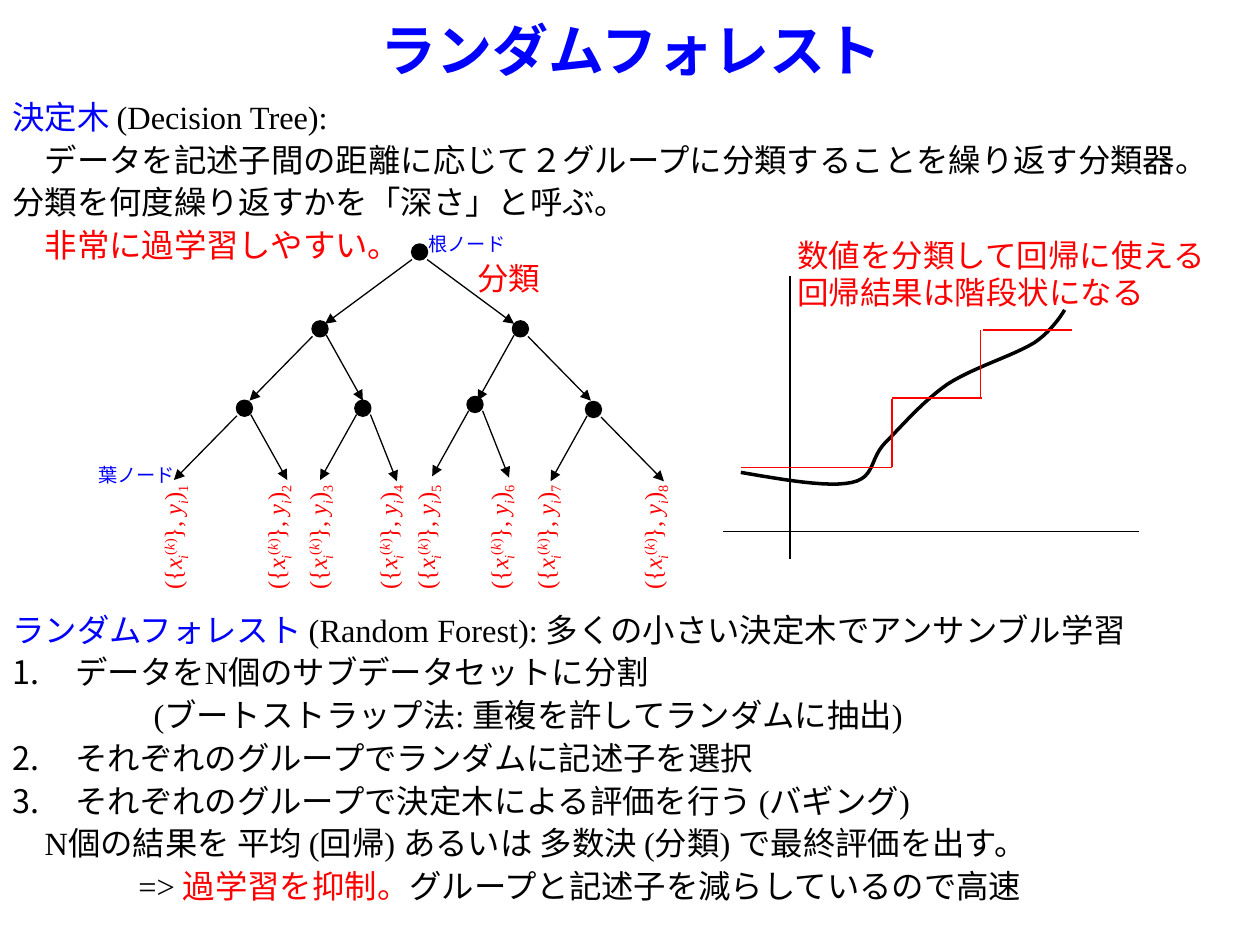
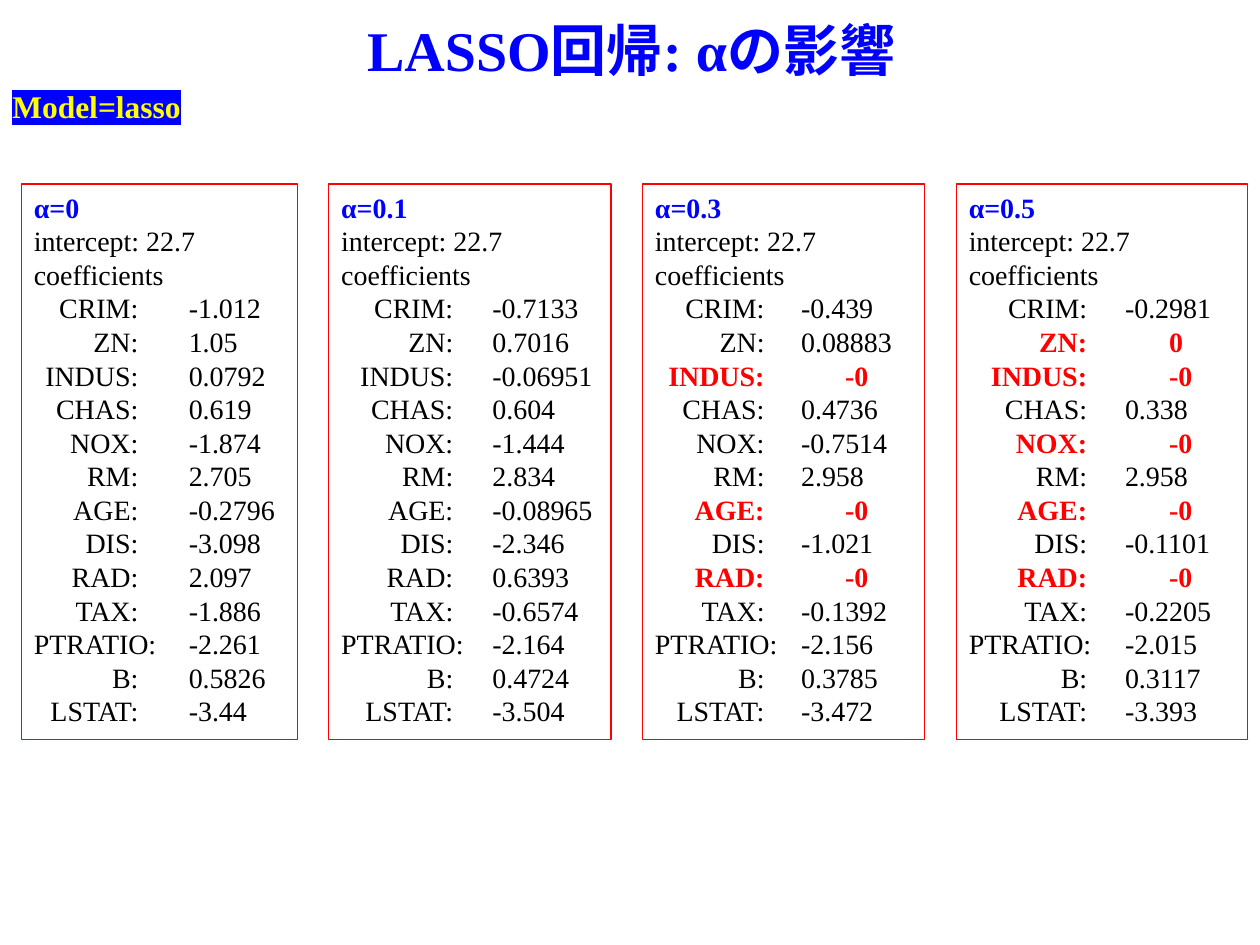
from lxml.etree import SubElement
from pptx import Presentation
from pptx.dml.color import RGBColor
from pptx.enum.shapes import MSO_CONNECTOR, MSO_SHAPE
from pptx.enum.text import MSO_ANCHOR, PP_ALIGN
from pptx.oxml.ns import qn
from pptx.util import Inches, Pt

FONT = "Times New Roman"
HUES = {"blue": "0000FF", "red": "FF0000", "black": "000000", "yellow": "FFFF00"}

# Body text: (left indent, first list number or None, [(text, colour), ...])
TREE_TEXT = [
    (0, None, [("決定木 ", "blue"), ("(Decision Tree):", "black")]),
    (0, None, [("　データを記述子間の距離に応じて２グループに分類することを繰り返す分類器。", "black")]),
    (0, None, [("分類を何度繰り返すかを「深さ」と呼ぶ。", "black")]),
    (0, None, [("　非常に過学習しやすい。", "red")]),
]
FOREST_TEXT = [
    (0, None, [("ランダムフォレスト ", "blue"),
               ("(Random Forest): 多くの小さい決定木でアンサンブル学習", "black")]),
    (0.5, 1, [("データをN個のサブデータセットに分割", "black")]),
    (1.12, None, [("(ブートストラップ法: 重複を許してランダムに抽出)", "black")]),
    (0.5, 2, [("それぞれのグループでランダムに記述子を選択", "black")]),
    (0.5, 2, [("それぞれのグループで決定木による評価を行う (バギング)", "black")]),
    (0, None, [("　N個の結果を 平均 (回帰) あるいは 多数決 (分類) で最終評価を出す。", "black")]),
    (1, None, [("=> ", "black"), ("過学習を抑制。", "red"),
               ("グループと記述子を減らしているので高速", "black")]),
]

# Branch: offsets from a node centre to the start and the tip of its arrow
BRANCH = {
    "root": (0.06, 0.06, 0.75, 0.57),
    "wide": (0.06, 0.06, 0.56, 0.57),
    "near": (0.05, 0.05, 0.34, 0.57),
    "slim": (0.06, 0.05, 0.27, 0.58),
}
# Node: centre x, centre y, left branch, right branch
NODES = [
    (3.33, 2.00, "root", "root"),
    (2.54, 2.61, "wide", "near"),
    (4.13, 2.61, "near", "wide"),
    (1.94, 3.24, "wide", "near"),
    (2.88, 3.24, "near", "slim"),
    (3.77, 3.21, "near", "slim"),
    (4.71, 3.25, "near", "wide"),
]
DOT = 0.11
LEAVES = [0.76, 1.58, 1.91, 2.47, 2.77, 3.35, 3.72, 4.57]
# Formula: text, italic, baseline in percent
LEAF = [("({", False, 0), ("x", True, 0), ("i", True, -25), ("(", False, 30),
        ("k", True, 30), (")", False, 30), ("}, ", False, 0), ("y", True, 0),
        ("i", True, -25), (")", False, 0)]

AXES = [(6.27, 2.19, 6.27, 4.44), (5.74, 4.22, 9.04, 4.22)]
STEPS = [(5.88, 3.71, 7.08, 3.71), (7.08, 3.17, 7.08, 3.71), (7.78, 2.62, 7.78, 3.16),
         (7.08, 3.16, 7.79, 3.16), (7.80, 2.62, 8.51, 2.62)]
CURVE = [(5.88, 3.75), (6.23, 3.81), (6.57, 3.87), (6.76, 3.83), (6.95, 3.79),
         (6.90, 3.64), (7.03, 3.51), (7.16, 3.38), (7.32, 3.19), (7.52, 3.05),
         (7.72, 2.92), (8.05, 2.82), (8.21, 2.72), (8.36, 2.62), (8.45, 2.46),
         (8.45, 2.46)]
# Note: box, size, colour, lines
NOTES = [
    ((3.69, 2.01, 0.83, 0.40), 18, "red", ["分類"]),
    ((6.23, 1.82, 3.65, 0.71), 18, "red", ["数値を分類して回帰に使える", "回帰結果は階段状になる"]),
    ((0.68, 3.63, 0.83, 0.29), 11, "blue", ["葉ノード"]),
    ((3.30, 1.79, 0.83, 0.29), 11, "blue", ["根ノード"]),
]

TERMS = ["CRIM", "ZN", "INDUS", "CHAS", "NOX", "RM", "AGE", "DIS", "RAD", "TAX",
         "PTRATIO", "B", "LSTAT"]
# Fit: alpha, left, width, tab where names end, tab where values start, values
FITS = [
    ("0", 0.17, 2.19, 0.83, 1.23,
     "-1.012 1.05 0.0792 0.619 -1.874 2.705 -0.2796 -3.098 2.097 -1.886 -2.261 0.5826 -3.44"),
    ("0.1", 2.61, 2.24, 0.89, 1.20,
     "-0.7133 0.7016 -0.06951 0.604 -1.444 2.834 -0.08965 -2.346 0.6393 -0.6574 -2.164 0.4724 -3.504"),
    ("0.3", 5.10, 2.24, 0.87, 1.16,
     "-0.439 0.08883 -0 0.4736 -0.7514 2.958 -0 -1.021 -0 -0.1392 -2.156 0.3785 -3.472"),
    ("0.5", 7.59, 2.31, 0.94, 1.24,
     "-0.2981 0 -0 0.338 -0 2.958 -0 -0.1101 -0 -0.2205 -2.015 0.3117 -3.393"),
]
ZERO_GAP = 0.35


def color(name):
    return RGBColor.from_string(HUES[name])


def style(run, size, hue, bold=False, italic=False):
    font = run.font
    font.name, font.size = FONT, Pt(size)
    font.bold, font.italic = bold, italic
    font.color.rgb = color(hue)


def add_run(par, text, *look, **more):
    run = par.add_run()
    run.text = text
    style(run, *look, **more)
    return run


def add_box(slide, box):
    shape = slide.shapes.add_textbox(*map(Inches, box))
    shape.text_frame.word_wrap = True
    return shape


def add_lines(frame, lines, size, hue, bold=False):
    frame.text = "\n".join(lines)
    for par in frame.paragraphs:
        for run in par.runs:
            style(run, size, hue, bold)


def add_page(deck, title):
    slide = deck.slides.add_slide(deck.slide_layouts[6])
    frame = add_box(slide, (0.01, 0, 10, 0.78)).text_frame
    frame.vertical_anchor = MSO_ANCHOR.MIDDLE
    add_lines(frame, [title], 32, "blue", True)
    frame.paragraphs[0].alignment = PP_ALIGN.CENTER
    return slide


def add_par(frame, first):
    return frame.paragraphs[0] if first else frame.add_paragraph()


def add_body(slide, box, rows):
    frame = add_box(slide, box).text_frame
    for i, (left, start, parts) in enumerate(rows):
        par = add_par(frame, i == 0)
        par.line_spacing = 1.1
        props = par._p.get_or_add_pPr()
        props.set("marL", str(Inches(left)))
        if start:
            props.set("indent", str(-Inches(left)))
            SubElement(props, qn("a:buAutoNum"), type="arabicPeriod", startAt=str(start))
        for text, hue in parts:
            add_run(par, text, 18.5, hue)


def add_line(slide, ends, hue, arrow=False):
    line = slide.shapes.add_connector(MSO_CONNECTOR.STRAIGHT, *map(Inches, ends))
    line.line.color.rgb = color(hue)
    line.line.width = Pt(0.75)
    if arrow:
        SubElement(line.line._get_or_add_ln(), qn("a:tailEnd"), type="triangle")
    SubElement(line._element.spPr, qn("a:effectLst"))


def add_tree(slide):
    for x, y, *kinds in NODES:
        dot = slide.shapes.add_shape(
            MSO_SHAPE.OVAL, *map(Inches, (x - DOT / 2, y - DOT / 2, DOT, DOT)))
        dot.shadow.inherit = False
        dot.fill.solid()
        dot.fill.fore_color.rgb = dot.line.color.rgb = color("black")
        dot.line.width = Pt(2)
        for side, kind in zip((-1, 1), kinds):
            dx, dy, tipx, tipy = BRANCH[kind]
            add_line(slide, (x + side * dx, y + dy, x + side * tipx, y + tipy), "black", True)
    for i, left in enumerate(LEAVES, 1):
        label = add_box(slide, (left, 4, 1.22, 0.34))
        label.rotation = 270
        par = label.text_frame.paragraphs[0]
        for text, slant, base in LEAF + [(str(i), False, -25)]:
            run = add_run(par, text, 14, "red", italic=slant)
            if base:
                run._r.get_or_add_rPr().set("baseline", str(base * 1000))


def bezier(knots, steps=12):
    """Points along joined cubic segments, without the first knot."""
    for i in range(0, len(knots) - 1, 3):
        for n in range(1, steps + 1):
            t = n / steps
            mix = ((1 - t) ** 3, 3 * t * (1 - t) ** 2, 3 * t * t * (1 - t), t ** 3)
            yield tuple(Inches(sum(m * k[axis] for m, k in zip(mix, knots[i:i + 4])))
                        for axis in (0, 1))


def add_graph(slide):
    for ends in AXES:
        add_line(slide, ends, "black")
    pen = slide.shapes.build_freeform(*map(Inches, CURVE[0]))
    pen.add_line_segments(list(bezier(CURVE)), close=False)
    curve = pen.convert_to_shape()
    curve.shadow.inherit = False
    curve.fill.background()
    curve.line.color.rgb = color("black")
    curve.line.width = Pt(2)
    for ends in STEPS:
        add_line(slide, ends, "red")


def set_tabs(par, *stops):
    tabs = SubElement(par._p.get_or_add_pPr(), qn("a:tabLst"))
    for pos, side in stops:
        SubElement(tabs, qn("a:tab"), pos=str(Inches(pos)), algn=side)


def add_fit(slide, alpha, left, width, name, value, nums):
    card = slide.shapes.add_shape(
        MSO_SHAPE.RECTANGLE, *map(Inches, (left, 1.46, width, 4.41)))
    card.shadow.inherit = False
    card.fill.background()
    card.line.color.rgb = color("red")
    card.line.width = Pt(0.75)
    frame = card.text_frame
    frame.word_wrap = True
    frame.vertical_anchor = MSO_ANCHOR.TOP
    add_lines(frame, [f"α={alpha}", "intercept: 22.7", "coefficients"], 16, "black")
    style(frame.paragraphs[0].runs[0], 16, "blue", True)
    for term, num in zip(TERMS, nums.split()):
        zero = float(num) == 0
        par = frame.add_paragraph()
        set_tabs(par, (name, "r"), (value + ZERO_GAP * zero, "l"))
        add_run(par, f"\t{term}:\t{num}", 16, "red" if zero else "black", bold=zero)
    for par in frame.paragraphs:
        par.alignment = PP_ALIGN.LEFT


def add_forest(deck):
    slide = add_page(deck, "ランダムフォレスト")
    add_body(slide, (0, 0.69, 9.92, 1.5), TREE_TEXT)
    add_body(slide, (0, 4.76, 9.92, 2.6), FOREST_TEXT)
    add_tree(slide)
    add_graph(slide)
    for box, size, hue, lines in NOTES:
        add_lines(add_box(slide, box).text_frame, lines, size, hue)


def add_lasso(deck):
    slide = add_page(deck, "LASSO回帰: αの影響")
    par = add_box(slide, (0, 0.64, 5.17, 0.4)).text_frame.paragraphs[0]
    run = add_run(par, "Model=lasso", 18, "yellow", bold=True)
    props = run._r.get_or_add_rPr()
    mark = SubElement(props, qn("a:highlight"))
    SubElement(mark, qn("a:srgbClr"), val=HUES["blue"])
    props.find(qn("a:solidFill")).addnext(mark)
    for fit in FITS:
        add_fit(slide, *fit)


def main():
    deck = Presentation()
    deck.slide_width, deck.slide_height = Inches(10), Inches(7.5)
    add_forest(deck)
    add_lasso(deck)
    deck.save("out.pptx")


if __name__ == "__main__":
    main()
